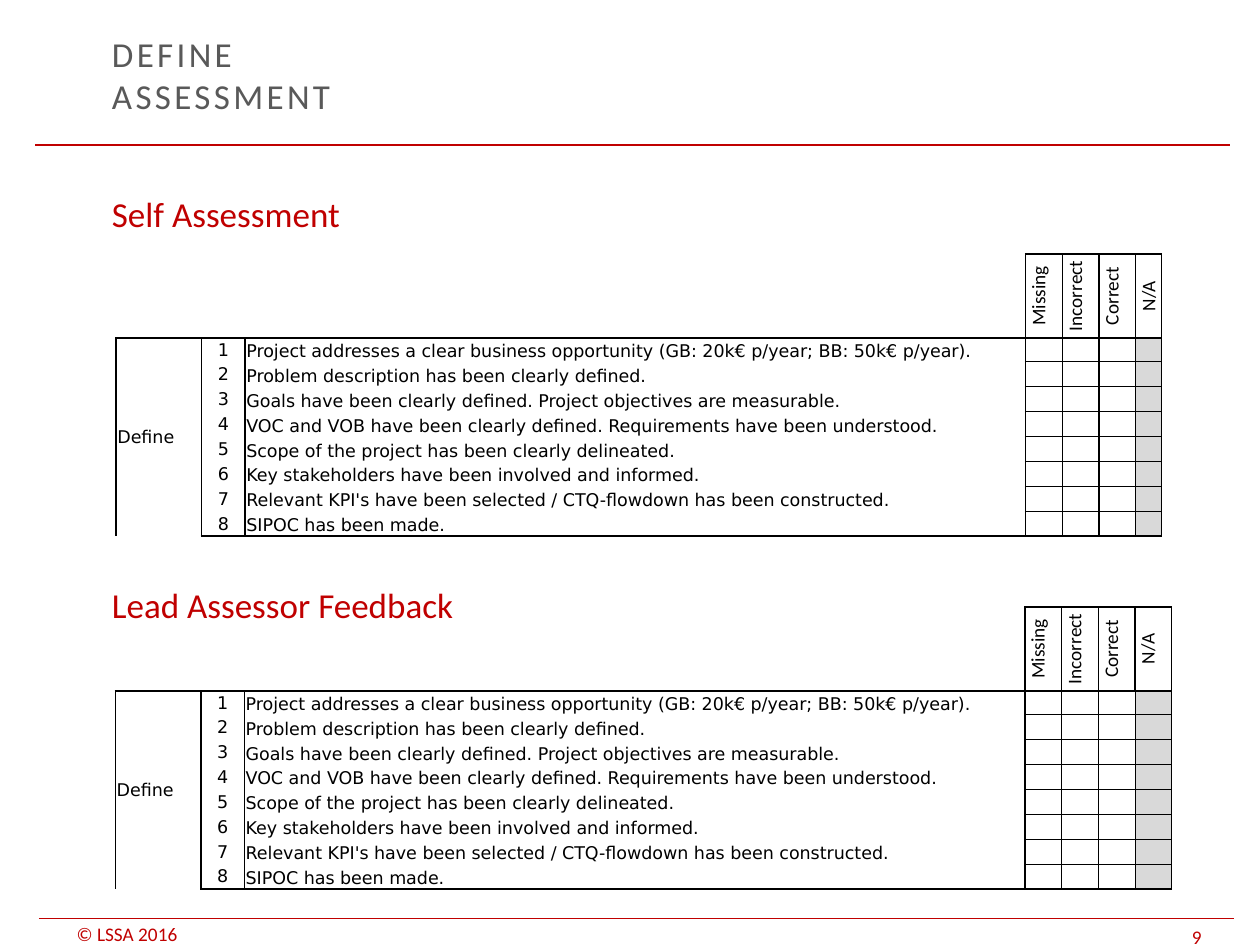
"""Build the Define assessment slide with two checklists."""
from lxml import etree
from pptx import Presentation
from pptx.dml.color import RGBColor
from pptx.enum.shapes import MSO_CONNECTOR
from pptx.enum.text import MSO_ANCHOR, PP_ALIGN
from pptx.oxml.ns import qn
from pptx.util import Pt

LINE = MSO_CONNECTOR.STRAIGHT
TOP, MIDDLE, BOTTOM = MSO_ANCHOR.TOP, MSO_ANCHOR.MIDDLE, MSO_ANCHOR.BOTTOM
LEFT, CENTER = PP_ALIGN.LEFT, PP_ALIGN.CENTER

COLORS = {"red": "C00000", "title": "595959", "black": "000000", "na": "D9D9D9"}
TITLE = "DEFINE\vASSESSMENT"
HEADINGS = ["Self Assessment", "Lead Assessor Feedback"]
PHASE = "Define"
RATINGS = ["Missing", "Incorrect", "Correct", "N/A"]
CRITERIA = [
    "Project addresses a clear business opportunity (GB: 20k€ p/year; BB: 50k€ p/year).",
    "Problem description has been clearly defined.",
    "Goals have been clearly defined. Project objectives are measurable.",
    "VOC and VOB have been clearly defined. Requirements have been understood.",
    "Scope of the project has been clearly delineated.",
    "Key stakeholders have been involved and informed.",
    "Relevant KPI's have been selected / CTQ-flowdown has been constructed.",
    "SIPOC has been made.",
]
FOOTERS = [("© LSSA 2016", (36.7, 527, 102, 13)), ("9", (674, 526.3, 46, 15.8))]
RULES = [(20.2, 702.7, 82.8), (22.3, 704.9, 524.9)]
TABLES = [(66.4, 145.2, 14.7), (66, 346.8, 21)]

LEAD_WIDTHS = [48.75, 25, 446]
RATING_WIDTH = 21
ROW_HEIGHTS = [48, 13.5] + [14.25] * (len(CRITERIA) - 1)
FIRST_RATING = len(LEAD_WIDTHS)
HEADING_GAP = 199.6
CALIBRI, DEJAVU = "Calibri", "DejaVu Sans"


def write(p, text, size, color, name=CALIBRI, align=LEFT, spacing=None):
    p.text = text
    p.alignment = align
    for r in p.runs:
        for key, value in {"size": Pt(size), "name": name}.items():
            setattr(r.font, key, value)
        r.font.color.rgb = RGBColor.from_string(COLORS[color])
        if spacing:
            r.font._element.set("spc", str(spacing))


def add_box(s, box, anchor, inset=3.6):
    tf = s.shapes.add_textbox(*map(Pt, box)).text_frame
    formats = {"word_wrap": True, "vertical_anchor": anchor,
               "margin_top": Pt(inset), "margin_bottom": Pt(inset)}
    for key, value in formats.items():
        setattr(tf, key, value)
    return tf


def add_rule(s, x1, x2, y):
    line = s.shapes.add_connector(LINE, Pt(x1), Pt(y), Pt(x2), Pt(y))
    line.line.color.rgb = RGBColor.from_string(COLORS["red"])
    line.line.width = Pt(0.75)
    etree.SubElement(line._element.spPr, qn("a:effectLst"))


def vertical_edge(row, col):
    if row == 0:
        return 0 if col < FIRST_RATING else 0.5 if col == 4 else 1
    return 0.5 if col in (4, 6) else 1


def horizontal_edge(row, col):
    if row in (1, len(ROW_HEIGHTS)):
        return 1
    if col < FIRST_RATING:
        return 0
    return 1 if row == 0 else 0.5


def set_borders(cell, row, col):
    tcPr = cell._tc.get_or_add_tcPr()
    edges = {"lnL": vertical_edge(row, col), "lnR": vertical_edge(row, col + 1),
             "lnT": horizontal_edge(row, col), "lnB": horizontal_edge(row + 1, col)}
    for tag, width in edges.items():
        ln = etree.SubElement(tcPr, qn(f"a:{tag}"), w=str(Pt(width)))
        fill = etree.SubElement(ln, qn("a:solidFill" if width else "a:noFill"))
        if width:
            etree.SubElement(fill, qn("a:srgbClr"), val=COLORS["black"])


def fill_cell(cell, row, col, text):
    formats = {"margin_left": Pt(0.7), "margin_right": Pt(0.7), "margin_top": Pt(0.7),
               "margin_bottom": 0, "vertical_anchor": MIDDLE if row and col < 2 else BOTTOM}
    for key, value in formats.items():
        setattr(cell, key, value)
    set_borders(cell, row, col)
    if row and col == FIRST_RATING + len(RATINGS) - 1:
        cell.fill.solid()
        cell.fill.fore_color.rgb = RGBColor.from_string(COLORS["na"])
    else:
        cell.fill.background()
    p = cell.text_frame.paragraphs[0]
    if not text:
        etree.SubElement(p._p, qn("a:endParaRPr"), sz="800")
    elif row == 0:
        write(p, text, 11, "black", align=CENTER)
        cell._tc.get_or_add_tcPr().set("vert", "vert270")
    else:
        write(p, text, 10, "black", DEJAVU, CENTER if col == 1 else LEFT)


def add_checklist(s, x, y, na_width):
    widths = LEAD_WIDTHS + [RATING_WIDTH] * (len(RATINGS) - 1) + [na_width]
    rows = [[""] * FIRST_RATING + RATINGS]
    for n, criterion in enumerate(CRITERIA, 1):
        rows.append([PHASE if n == 1 else "", str(n), criterion] + [""] * len(RATINGS))
    frame = s.shapes.add_table(len(rows), len(widths), Pt(x), Pt(y),
                               Pt(sum(widths)), Pt(sum(ROW_HEIGHTS)))
    table = frame.table
    table.first_row = table.horz_banding = False
    for column, width in zip(table.columns, widths):
        column.width = Pt(width)
    for i, (height, row) in enumerate(zip(ROW_HEIGHTS, rows)):
        table.rows[i].height = Pt(height)
        for j, text in enumerate(row):
            fill_cell(table.cell(i, j), i, j, text)
    table.cell(1, 0).merge(table.cell(len(CRITERIA), 0))


def main():
    prs = Presentation()
    prs.slide_width, prs.slide_height = Pt(720), Pt(540)
    s = prs.slides.add_slide(prs.slide_layouts[6])
    for text, box in FOOTERS:
        write(add_box(s, box, BOTTOM, 0).paragraphs[0], text, 11, "red")
    for rule in RULES:
        add_rule(s, *rule)
    tf = add_box(s, (56.9, 18.7, 510.5, 47.5), MIDDLE)
    write(tf.paragraphs[0], TITLE, 20, "title", spacing=190)
    tf = add_box(s, (56.9, 106.5, 623.5, 396), TOP)
    write(tf.paragraphs[0], HEADINGS[0], 20, "red")
    p = tf.add_paragraph()
    p.space_before = Pt(HEADING_GAP)
    write(p, HEADINGS[1], 20, "red")
    for checklist in TABLES:
        add_checklist(s, *checklist)
    prs.save("out.pptx")


if __name__ == "__main__":
    main()
